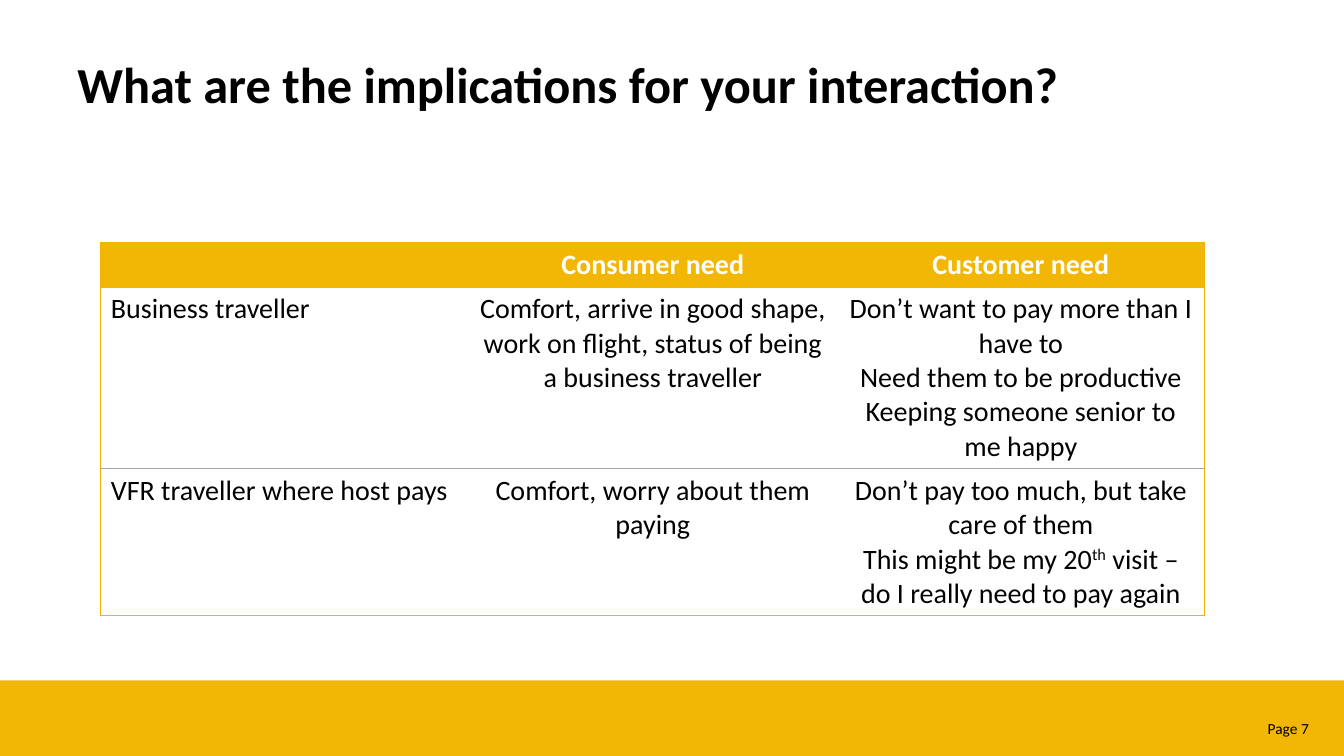
import pptx
import pptx.dml.color
import pptx.enum.shapes
import pptx.enum.text
import pptx.oxml
import pptx.oxml.ns
import pptx.util
from pptx.util import Inches

GOLD = "F2B605"
BORDER_GOLD = "F2B400"
DIVIDER_GREY = "A6A6A6"
ALIGN = pptx.enum.text.PP_ALIGN


def rgb(value):
    return pptx.dml.color.RGBColor.from_string(value)


def write(frame, text, size=20, color="000000", bold=False, align=ALIGN.LEFT):
    """Fill a frame: newlines split paragraphs, ^ marks enclose superscript."""
    frame.word_wrap = True
    for line_no, line in enumerate(text.split("\n")):
        paragraph = frame.paragraphs[0] if line_no == 0 else frame.add_paragraph()
        paragraph.alignment = align
        paragraph.font.size = pptx.util.Pt(size)
        for part_no, part in enumerate(line.split("^")):
            run = paragraph.add_run()
            run.text = part
            run.font.name = "Calibri"
            run.font.size = pptx.util.Pt(size)
            run.font.bold = bold
            run.font.color.rgb = rgb(color)
            if part_no % 2:
                run._r.get_or_add_rPr().set("baseline", "30000")


deck = pptx.Presentation()
deck.slide_width = Inches(13.33)
deck.slide_height = Inches(7.5)
slide = deck.slides.add_slide(deck.slide_layouts[6])

# Footer band and page number
band = slide.shapes.add_shape(
    pptx.enum.shapes.MSO_SHAPE.RECTANGLE,
    Inches(0), Inches(6.75), Inches(13.33), Inches(0.75))
band.shadow.inherit = False
band.fill.solid()
band.fill.fore_color.rgb = rgb(GOLD)
band.line.fill.background()

page_number = slide.shapes.add_textbox(
    Inches(11.86), Inches(7.08), Inches(1.22), Inches(0.29))
write(page_number.text_frame, "Page 7", size=11, align=ALIGN.RIGHT)

# Title
title = slide.shapes.add_textbox(Inches(0.67), Inches(0.44), Inches(12), Inches(0.78))
title.text_frame.vertical_anchor = pptx.enum.text.MSO_ANCHOR.MIDDLE
write(title.text_frame, "What are the implications for your interaction?",
      size=36, bold=True)

# Table of needs
needs = [
    ["", "Consumer need", "Customer need"],
    ["Business traveller",
     "Comfort, arrive in good shape, work on flight, status of being a business traveller",
     "Don’t want to pay more than I have to\nNeed them to be productive\n"
     "Keeping someone senior to me happy"],
    ["VFR traveller where host pays",
     "Comfort, worry about them paying",
     "Don’t pay too much, but take care of them\n"
     "This might be my 20^th^ visit – do I really need to pay again"],
]
row_heights = [0.44, 1.8, 1.46]
table = slide.shapes.add_table(
    3, 3, Inches(1), Inches(2.41), Inches(10.95), Inches(sum(row_heights))).table
table.first_row = False
table.horz_banding = False
for column in table.columns:
    column.width = Inches(3.65)

for row_no, row in enumerate(needs):
    table.rows[row_no].height = Inches(row_heights[row_no])
    header = row_no == 0
    for col_no, text in enumerate(row):
        cell = table.cell(row_no, col_no)
        write(cell.text_frame, text, bold=header,
              color="FFFFFF" if header else "000000",
              align=ALIGN.CENTER if col_no else ALIGN.LEFT)
        if header:
            cell.fill.solid()
            cell.fill.fore_color.rgb = rgb(GOLD)
        else:
            cell.fill.background()

        borders = {
            "lnL": BORDER_GOLD if col_no == 0 else None,
            "lnR": BORDER_GOLD if col_no == 2 else None,
            "lnT": DIVIDER_GREY if row_no == 2 else BORDER_GOLD,
            "lnB": DIVIDER_GREY if row_no == 1 else BORDER_GOLD,
        }
        for position, (side, color) in enumerate(borders.items()):
            paint = (f'<a:solidFill><a:srgbClr val="{color}"/></a:solidFill>'
                     if color else "<a:noFill/>")
            cell._tc.get_or_add_tcPr().insert(position, pptx.oxml.parse_xml(
                f'<a:{side} {pptx.oxml.ns.nsdecls("a")} w="9525">{paint}</a:{side}>'))

deck.save("out.pptx")
